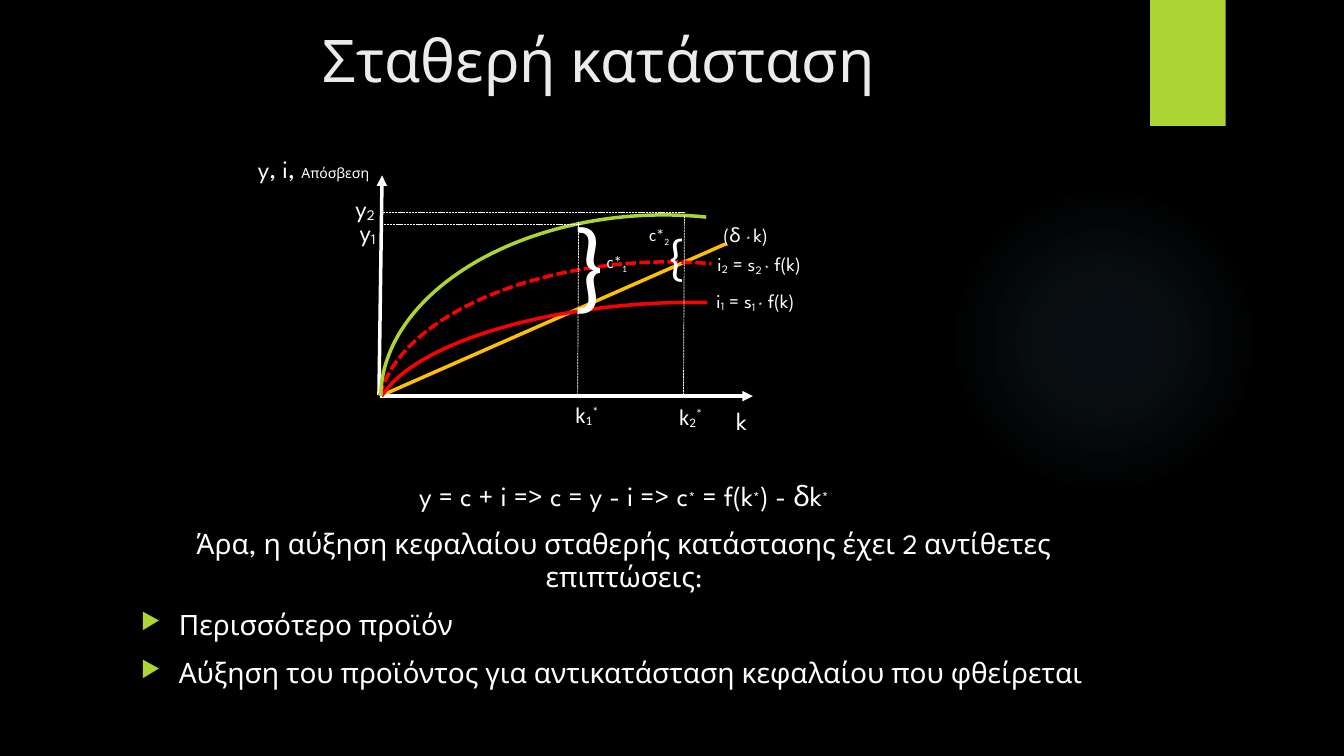
from dataclasses import dataclass

from lxml.etree import SubElement
from pptx import Presentation
from pptx.dml.color import RGBColor
from pptx.enum.dml import MSO_LINE
from pptx.enum.shapes import MSO_CONNECTOR, MSO_SHAPE
from pptx.enum.text import MSO_AUTO_SIZE as AutoSize, PP_ALIGN as Align
from pptx.oxml import parse_xml
from pptx.oxml.ns import nsdecls, qn
from pptx.util import Pt


@dataclass(frozen=True)
class Theme:
    background: str = "000000"
    text: str = "FFFFFF"
    title: str = "EBEBEB"
    accent: str = "ACD433"
    glow: str = "7AC4F0"
    investment: str = "FF0000"
    depreciation: str = "FFC000"
    heading_font: str = "League Spartan"
    label_font: str = "Calibri"
    title_size: int = 42
    body_size: int = 20
    axis_size: int = 18
    tick_size: int = 16
    curve_size: int = 14
    gap_size: int = 12
    note_size: int = 10
    large_brace: int = 72
    small_brace: int = 36
    curve_width: float = 2.5
    guide_width: float = 0.5


class SlideBuilder:
    def __init__(self, slide, theme):
        self.slide = slide
        self.theme = theme
        slide.background.fill.solid()
        slide.background.fill.fore_color.rgb = RGBColor.from_string(theme.background)

    def shape(self, kind, box, color=None):
        shape = self.slide.shapes.add_shape(kind, *map(Pt, box))
        shape.shadow.inherit = False
        shape.line.fill.background()
        if color:
            shape.fill.solid()
            shape.fill.fore_color.rgb = RGBColor.from_string(color)
        else:
            shape.fill.background()
        return shape

    def glow(self, box, stops):
        shape = self.shape(MSO_SHAPE.OVAL, box)
        stop_xml = "".join(
            f'<a:gs pos="{position * 1000}"><a:srgbClr val="{self.theme.glow}">'
            f'<a:alpha val="{alpha * 1000}"/></a:srgbClr></a:gs>'
            for position, alpha in stops)
        gradient = parse_xml(
            f'<a:gradFill {nsdecls("a")} rotWithShape="1"><a:gsLst>{stop_xml}</a:gsLst>'
            '<a:path path="circle"><a:fillToRect l="50000" t="50000" r="50000" b="50000"/>'
            '</a:path></a:gradFill>')
        properties = shape.element.spPr
        properties.replace(properties.find(qn("a:noFill")), gradient)

    def stroke(self, line, color, width, dashed):
        line.color.rgb = RGBColor.from_string(color)
        line.width = Pt(width)
        if dashed:
            line.dash_style = MSO_LINE.SQUARE_DOT

    def curve(self, box, start, end, color, dashed=False):
        shape = self.shape(MSO_SHAPE.ARC, box)
        shape.rotation = 266.6
        shape.adjustments[0] = start
        shape.adjustments[1] = end
        self.stroke(shape.line, color, self.theme.curve_width, dashed)

    def line(self, start, end, color, width, dashed=False, arrow=False):
        connector = self.slide.shapes.add_connector(
            MSO_CONNECTOR.STRAIGHT, *map(Pt, start + end))
        self.stroke(connector.line, color, width, dashed)
        properties = connector.element.spPr
        if arrow:
            SubElement(properties.find(qn("a:ln")), qn("a:tailEnd"), type="triangle")
        SubElement(properties, qn("a:effectLst"))

    def axis(self, start, end):
        self.line(start, end, self.theme.text, self.theme.curve_width, arrow=True)

    def guide(self, start, end):
        self.line(start, end, self.theme.text, self.theme.guide_width, dashed=True)

    def frame(self, box, wrap=True, grow=True):
        frame = self.slide.shapes.add_textbox(*map(Pt, box)).text_frame
        frame.word_wrap = wrap
        frame.auto_size = AutoSize.SHAPE_TO_FIT_TEXT if grow else AutoSize.NONE
        return frame

    def bullet(self, paragraph):
        properties = paragraph._p.get_or_add_pPr()
        properties.set("marL", str(Pt(27)))
        properties.set("indent", str(-Pt(27)))
        color = SubElement(properties, qn("a:buClr"))
        SubElement(color, qn("a:srgbClr"), val=self.theme.accent)
        SubElement(properties, qn("a:buSzPct"), val="80000")
        SubElement(properties, qn("a:buChar"), char="▶")

    def add_runs(self, paragraph, runs, size, font, color=None, align=Align.LEFT):
        """Each run is (text, baseline percent) or (text, baseline percent, size)."""
        paragraph.alignment = align
        paragraph.font.name = font
        paragraph.font.size = Pt(size)
        paragraph.font.color.rgb = RGBColor.from_string(color or self.theme.text)
        for text, baseline, *own_size in runs:
            run = paragraph.add_run()
            run.text = text
            if baseline:
                run._r.get_or_add_rPr().set("baseline", str(baseline * 1000))
            if own_size:
                run.font.size = Pt(own_size[0])

    def label(self, box, runs, size, font=None, align=Align.LEFT, wrap=True, spacing=None):
        paragraph = self.frame(box, wrap).paragraphs[0]
        if spacing:
            paragraph.line_spacing = spacing
        self.add_runs(paragraph, runs, size, font or self.theme.heading_font, align=align)

    def title(self, box, text):
        theme = self.theme
        self.add_runs(self.frame(box, grow=False).paragraphs[0], [(text, 0)],
                      theme.title_size, theme.heading_font, theme.title, Align.CENTER)

    def body(self, box, items):
        frame = self.frame(box, grow=False)
        for index, (runs, bulleted) in enumerate(items):
            paragraph = frame.add_paragraph() if index else frame.paragraphs[0]
            if index:
                paragraph.space_before = Pt(10)
            if bulleted:
                self.bullet(paragraph)
            self.add_runs(paragraph, runs, self.theme.body_size, self.theme.heading_font,
                          align=Align.JUSTIFY if bulleted else Align.CENTER)


def main():
    presentation = Presentation()
    presentation.slide_width, presentation.slide_height = Pt(960), Pt(540)
    theme = Theme()
    builder = SlideBuilder(presentation.slides.add_slide(presentation.slide_layouts[6]), theme)

    # Backdrop and title
    builder.glow((677.5, 131.8, 221.8, 221.8), [(0, 7), (36, 6), (69, 0)])
    builder.shape(MSO_SHAPE.RECTANGLE, (821.5, 0, 54, 90), theme.accent)
    builder.title((57.6, 13.7, 740.2, 110.2), "Σταθερή κατάσταση")

    # Axes, depreciation line and curves
    origin = (271.4, 283)
    builder.line(origin, (518.4, 174.2), theme.depreciation, theme.curve_width)
    builder.axis((270.7, 282.2), (272.9, 125.3))
    builder.axis(origin, (537.8, 283))
    builder.curve((362.2, 95, 198.7, 383.8), 164.88, 17.26, theme.investment, dashed=True)
    builder.curve((394.6, 89.3, 145.4, 400.3), 165.18, 18.46, theme.investment)
    builder.curve((340.6, 85, 246.2, 383.8), 163, 13.15, theme.accent)

    # Guides to both steady states
    for start, end in [((413.3, 158.4), (412.6, 283)), ((488.9, 154.1), (488.2, 284.4)),
                       ((489.6, 151.9), (271.4, 151.9)), ((414.7, 160.6), (272.9, 160.6))]:
        builder.guide(start, end)

    # Axis labels
    builder.label((497.5, 285.8, 43.2, 28.8), [("k", 0)], theme.axis_size, align=Align.RIGHT)
    builder.label((154.1, 105.8, 116.6, 28.8),
                  [("y, i, ", 0), ("Απόσβεση", 0, theme.note_size)],
                  theme.axis_size, align=Align.RIGHT)
    builder.label((495.4, 146.9, 77.8, 29.5), [("(δ ", 0), ("* ", -10), ("k) ", 0)],
                  theme.curve_size, align=Align.CENTER, spacing=1.5)

    # Labels of each steady state: curve, capital, output and consumption
    states = [("1", (504.7, 203), (403.9, 283), (208.8, 151.2), (426.2, 176.4)),
              ("2", (505.4, 176.4), (478.1, 284.4), (208.1, 133.9), (456.5, 157))]
    for number, curve, capital, output, consumption in states:
        builder.label(curve + (83, 24.5),
                      [("i", 0), (number, -10), (" = s", 0), (number + " ", -15),
                       ("*", -10), (" f(k)", 0)], theme.curve_size, wrap=False)
        builder.label(capital + (40.3, 26.6), [("k", 0), (number, -10), ("*", 30)],
                      theme.tick_size, theme.label_font)
        builder.label(output + (66.6, 28.8), [("y", 0), (number, -10)],
                      theme.axis_size, align=Align.RIGHT)
        builder.label(consumption + (43.9, 21.6), [("c*", 0), (number, -25)],
                      theme.gap_size, theme.label_font)

    # Consumption braces
    builder.label((406.1, 139, 10.1, 94.3), [("}", 0)], theme.large_brace, theme.label_font)
    builder.label((470.9, 157, 43.2, 51.1), [("{", 0)], theme.small_brace, theme.label_font)

    # Conclusions
    builder.body((93.6, 338.4, 704.2, 169.9), [
        ([("y = c + i => c = y - i => c", 0), ("*", 10), (" = f(k", 0), ("*", 10),
          (") - δk", 0), ("*", 10)], False),
        ([("Άρα, η αύξηση κεφαλαίου σταθερής κατάστασης έχει 2 αντίθετες επιπτώσεις:", 0)],
         False),
        ([("Περισσότερο προϊόν", 0)], True),
        ([("Αύξηση του προϊόντος για αντικατάσταση κεφαλαίου που φθείρεται", 0)], True),
    ])

    presentation.save("out.pptx")


if __name__ == "__main__":
    main()
